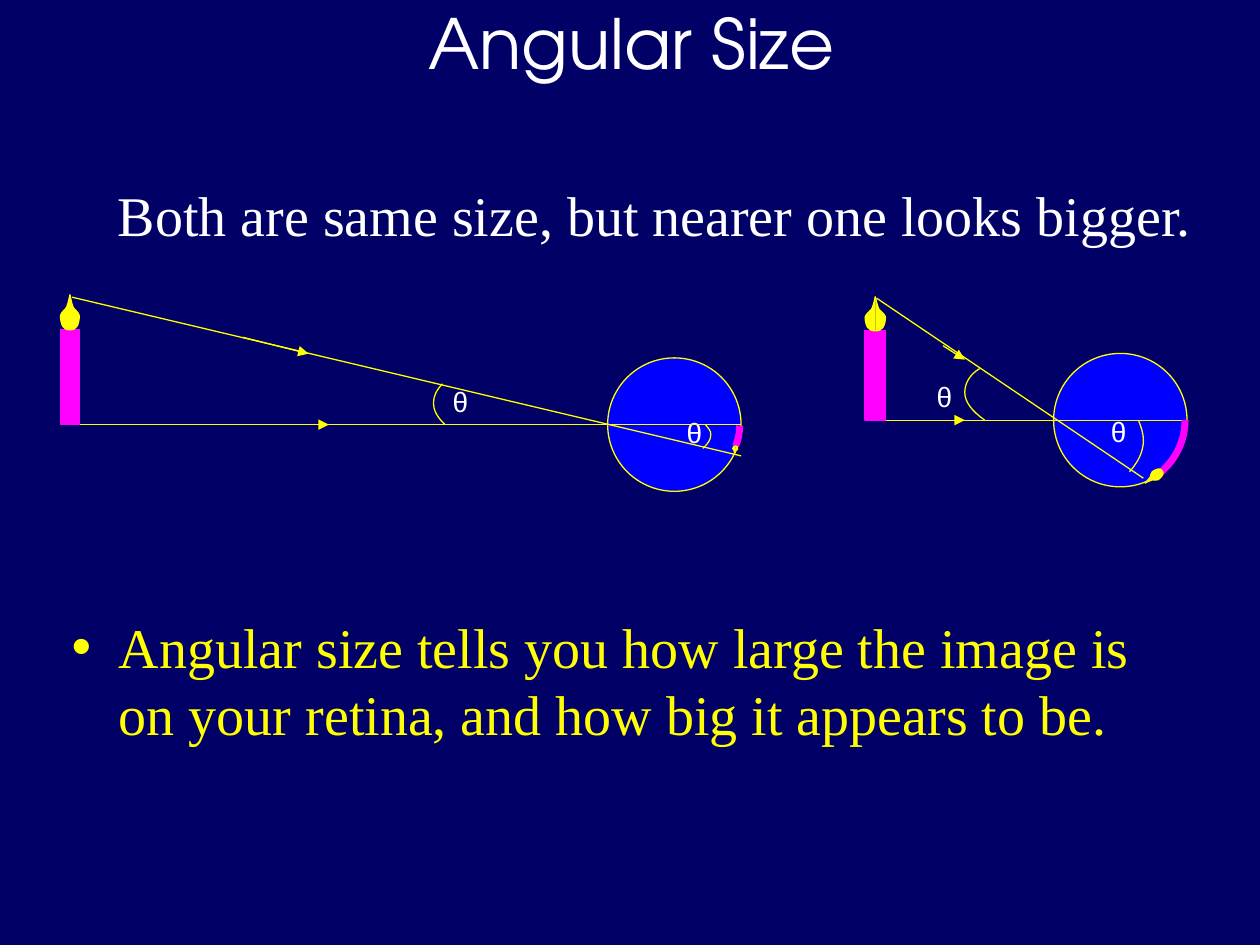
from copy import deepcopy
from dataclasses import dataclass
from math import hypot

from lxml.etree import SubElement
from pptx import Presentation
from pptx.dml.color import RGBColor
from pptx.enum.shapes import MSO_CONNECTOR as CONN, MSO_SHAPE as SHAPE
from pptx.enum.text import MSO_ANCHOR as ANCHOR, PP_ALIGN as ALIGN
from pptx.oxml.ns import qn
from pptx.util import Cm, Pt

NAVY, BLUE, YELLOW, MAGENTA, WHITE = "000066", "0000FF", "FFFF00", "FF00FF", "FFFFFF"
EYE = 2.69  # diameter in cm

# Half a flame: x is the share of the half width, y the share of the height
HALF_FLAME = [(0, 0), (0.1, 0.14), (0.2, 0.27), (0.36, 0.37),
              (0.55, 0.45), (0.9, 0.49), (1, 0.6),
              (1, 0.7), (0.9, 0.84), (0.75, 0.9),
              (0.6, 0.96), (0.38, 1), (0, 1)]


@dataclass
class View:
    """One candle seen by one eye; points are in cm from the box corner."""
    axis: float
    candle_width: float
    flame_height: float
    top_ray: tuple
    top_arrow: tuple
    base_ray_start: float
    base_arrow: tuple
    angles: tuple  # pairs of arc and centre
    thetas: tuple
    retina: tuple
    image_flame: tuple
    image_flame_half: float


FAR = View(
    axis=2.62, candle_width=0.38, flame_height=0.71,
    top_ray=((0.23, 0.05), (13.72, 3.25)),
    top_arrow=((3.68, 0.86), (5, 1.19)),
    base_ray_start=0.15, base_arrow=(4.37, 5.41),
    angles=(([(7.75, 2.62), (7.59, 2.46), (7.52, 2.34), (7.52, 2.18),
              (7.52, 2.06), (7.57, 1.93), (7.7, 1.8)], (9.93, 2.18)),
            ([(12.95, 3.1), (13.06, 3), (13.11, 2.92), (13.11, 2.82),
              (13.11, 2.74), (13.06, 2.69), (13, 2.62)], (11.66, 2.82))),
    thetas=((7.65, 1.68), (12.37, 2.31)),
    retina=([(13.69, 2.64), (13.69, 2.77), (13.67, 2.92), (13.61, 3.05)], (12.34, 2.64)),
    image_flame=((13.59, 3.2), (13.61, 3.05)), image_flame_half=0.05)

NEAR = View(
    axis=2.49, candle_width=0.41, flame_height=0.69,
    top_ray=((0.23, 0.03), (5.61, 3.66)),
    top_arrow=((1.57, 0.99), (2.01, 1.27)),
    base_ray_start=0.23, base_arrow=(0.99, 2.01),
    angles=(([(2.41, 2.49), (2.16, 2.31), (2.01, 2.13), (2.01, 1.93),
              (2.01, 1.75), (2.11, 1.57), (2.31, 1.45)], (4.42, 1.93)),
            ([(5.33, 3.53), (5.51, 3.33), (5.61, 3.12), (5.61, 2.9),
              (5.61, 2.74), (5.56, 2.62), (5.51, 2.49)], (4.17, 2.9))),
    thetas=((1.19, 1.55), (4.7, 2.26)),
    retina=([(6.45, 2.49), (6.45, 2.9), (6.27, 3.28), (5.94, 3.56)], (5.11, 2.49)),
    image_flame=((5.64, 3.76), (5.99, 3.51)), image_flame_half=0.1)


def rgb(color):
    return RGBColor.from_string(color)


def paint(sp, line, fill=None, width=0.75):
    sp.shadow.inherit = False
    sp.line.color.rgb = rgb(line)
    sp.line.width = Pt(width)
    if fill:
        sp.fill.solid()
        sp.fill.fore_color.rgb = rgb(fill)
    else:
        sp.fill.background()


def write(p, text, font, size, color):
    p.text = text
    p.font.name = font
    p.font.size = Pt(size)
    p.font.color.rgb = rgb(color)


def place(sp, x, y, w, h):
    sp.left, sp.top, sp.width, sp.height = Cm(x), Cm(y), Cm(w), Cm(h)


def add_curve(s, x, y, controls, center=None):
    """Chain cubic curves; a center adds an unstroked sector behind the arc."""
    corners = controls + ([center] if center else [])
    points = [(Cm(x + px), Cm(y + py)) for px, py in corners]
    builder = s.shapes.build_freeform(*points[0])
    builder.add_line_segments(points[1:], close=bool(center))
    sp = builder.convert_to_shape()

    outline = next(sp._element.iter(qn("a:path")))
    lines = outline.findall(qn("a:lnTo"))
    for i in range(0, len(controls) - 1, 3):
        curve = SubElement(outline, qn("a:cubicBezTo"))
        lines[i].addprevious(curve)
        for line in lines[i:i + 3]:
            curve.append(line[0])
            outline.remove(line)
    if center:
        sector = deepcopy(outline)
        sector.set("stroke", "0")
        outline.addnext(sector)
        outline.set("fill", "none")
        for end in outline[-2:]:
            outline.remove(end)
    return sp


def add_flame(s, x, y, tip, base, half):
    """Draw both halves of a flame along the axis from tip to base."""
    ax, ay = base[0] - tip[0], base[1] - tip[1]
    length = hypot(ax, ay)
    for side in (half / length, -half / length):
        points = [(tip[0] + v * ax - u * side * ay, tip[1] + v * ay + u * side * ax)
                  for u, v in HALF_FLAME]
        paint(add_curve(s, x, y, points), YELLOW, YELLOW)


def add_ray(s, x, y, start, end, arrow=False):
    ray = s.shapes.add_connector(CONN.STRAIGHT, Cm(x + start[0]), Cm(y + start[1]),
                                 Cm(x + end[0]), Cm(y + end[1]))
    ray.line.color.rgb = rgb(YELLOW)
    ray.line.width = Pt(0.75)
    if arrow:
        SubElement(ray.line._get_or_add_ln(), qn("a:tailEnd"), type="triangle")
    SubElement(ray._element.spPr, qn("a:effectLst"))


def add_theta(s, x, y):
    tf = s.shapes.add_textbox(Cm(x), Cm(y), Cm(0.82), Cm(0.93)).text_frame
    tf.word_wrap = False
    tf.paragraphs[0].alignment = ALIGN.CENTER
    write(tf.paragraphs[0], "θ", "Arial", 16, WHITE)


def add_view(s, x, y, w, view):
    """Place candle, rays and eye in a box w wide, the eye at its right edge."""
    eye = s.shapes.add_shape(SHAPE.OVAL, Cm(x + w - EYE), Cm(y + view.axis - EYE / 2),
                             Cm(EYE), Cm(EYE))
    paint(eye, YELLOW, BLUE)

    for angle, (tx, ty) in zip(view.angles, view.thetas):
        paint(add_curve(s, x, y, *angle), YELLOW)
        add_theta(s, x + tx, y + ty)

    add_ray(s, x, y, (view.base_ray_start, view.axis), (w, view.axis))
    add_ray(s, x, y, *view.top_ray)
    add_ray(s, x, y, *view.top_arrow, arrow=True)
    add_ray(s, x, y, *((ax, view.axis) for ax in view.base_arrow), arrow=True)

    candle = s.shapes.add_shape(SHAPE.RECTANGLE, Cm(x), Cm(y + view.flame_height),
                                Cm(view.candle_width), Cm(view.axis - view.flame_height))
    paint(candle, MAGENTA, MAGENTA)
    half = view.candle_width / 2
    add_flame(s, x, y, (half, 0), (half, view.flame_height), half)

    paint(add_curve(s, x, y, *view.retina), MAGENTA, width=4)
    add_flame(s, x, y, *view.image_flame, view.image_flame_half)


def add_title(s, x, y, w, h):
    title = s.shapes.title
    place(title, x, y, w, h)
    tf = title.text_frame
    tf.vertical_anchor = ANCHOR.TOP
    tf.margin_top = 0
    tf.paragraphs[0].alignment = ALIGN.CENTER
    write(tf.paragraphs[0], "Angular Size", "TeX Gyre Adventor", 39.6, WHITE)


def add_caption(s, x, y, w, h):
    tf = s.shapes.add_textbox(Cm(x), Cm(y), Cm(w), Cm(h)).text_frame
    tf.word_wrap = True
    p = tf.paragraphs[0]
    p.alignment = ALIGN.CENTER
    p.space_before = Pt(6.4)
    write(p, "Both are same size, but nearer one looks bigger.", "Times New Roman", 32, WHITE)


def add_conclusion(s, x, y, w, h):
    body = s.placeholders[1]
    place(body, x, y, w, h)
    write(body.text_frame.paragraphs[0],
          "Angular size tells you how large the image is on your retina, "
          "and how big it appears to be.", "Times New Roman", 32, YELLOW)


def main():
    prs = Presentation()
    prs.slide_width, prs.slide_height = Cm(25.4), Cm(19.05)
    s = prs.slides.add_slide(prs.slide_layouts[1])
    s.background.fill.solid()
    s.background.fill.fore_color.rgb = rgb(NAVY)

    add_title(s, 1.93, 0, 21.59, 3.18)
    add_conclusion(s, 1.19, 12.22, 23.04, 3.43)
    add_view(s, 1.22, 5.94, 13.72, FAR)
    add_view(s, 17.44, 5.98, 6.49, NEAR)
    add_caption(s, 1.47, 3.51, 23.47, 1.93)
    prs.save("out.pptx")


if __name__ == "__main__":
    main()
